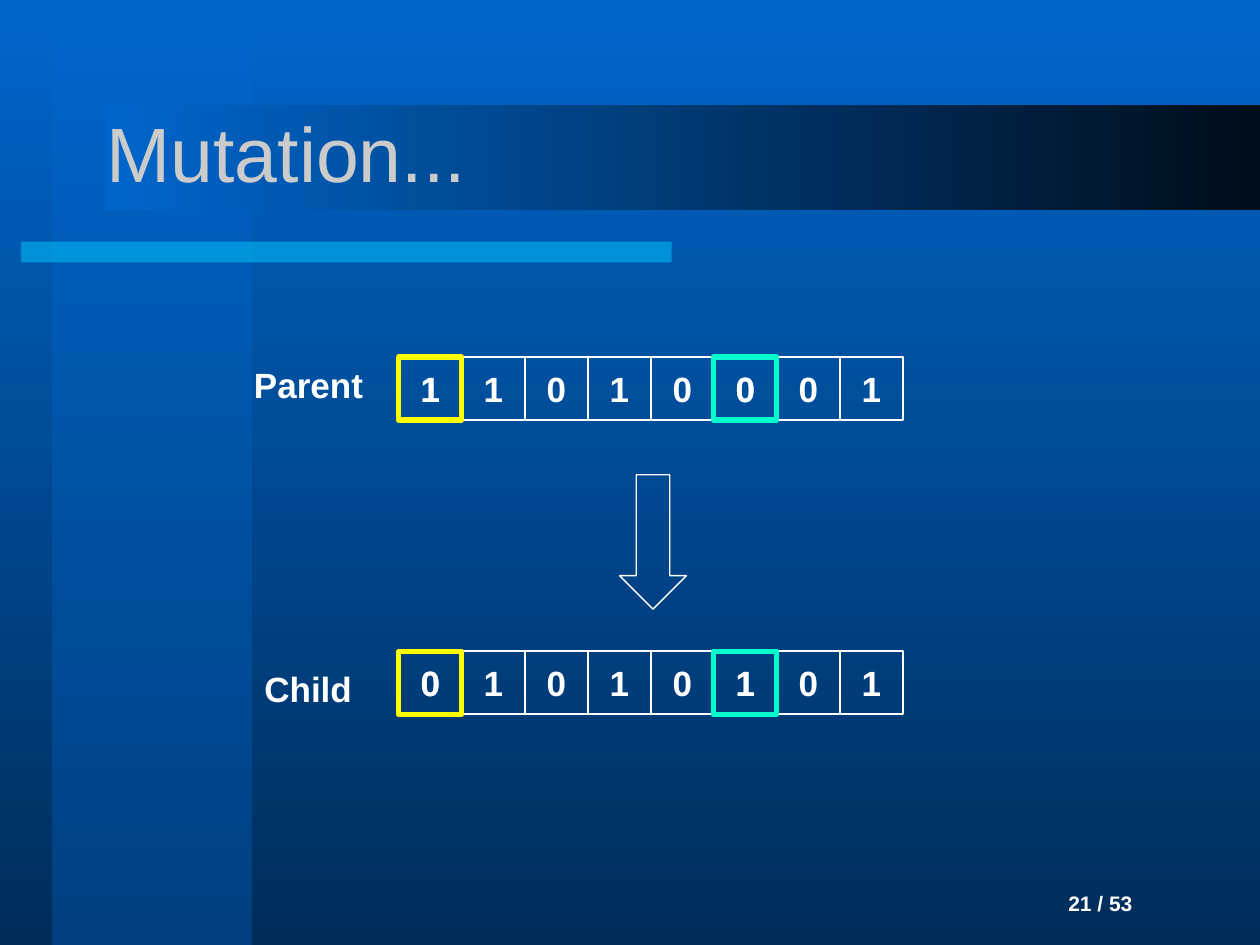
from lxml import etree
from pptx import Presentation
from pptx.dml.color import RGBColor
from pptx.enum.shapes import MSO_SHAPE
from pptx.enum.text import MSO_ANCHOR, PP_ALIGN
from pptx.oxml.ns import qn
from pptx.util import Cm, Pt

RECTANGLE = MSO_SHAPE.RECTANGLE
DOWN_ARROW = MSO_SHAPE.DOWN_ARROW
MIDDLE, TOP = MSO_ANCHOR.MIDDLE, MSO_ANCHOR.TOP
LEFT, CENTER = PP_ALIGN.LEFT, PP_ALIGN.CENTER

COLORS = {
    "blue": "0066CC", "panel": "0053A6", "navy": "002D5A", "night": "000D1A",
    "cyan": "00CCFF", "title": "CBCBCB", "white": "FFFFFF",
    "yellow": "FFFF00", "green": "00FFCC",
}
DOWNWARD, RIGHTWARD = 270, 0
CELL = 1.27
HIGHLIGHTS = {0: "yellow", 5: "green"}


def rgb(name):
    """Return the named colour."""
    return RGBColor.from_string(COLORS[name])


def set_gradient(fill, names, angle):
    """Fill with a linear gradient between two named colours."""
    fill.gradient()
    fill.gradient_angle = angle
    for stop, name in zip(fill.gradient_stops, names):
        stop.color.rgb = rgb(name)


def set_opacity(shape, percent):
    """Make every fill colour of a shape partly transparent."""
    for color in shape._element.spPr.iter(qn("a:srgbClr")):
        etree.SubElement(color, qn("a:alpha"), val=str(percent * 1000))


def add_shape(slide, kind, box):
    """Add a preset shape without shadow, fill or line."""
    shape = slide.shapes.add_shape(kind, *map(Cm, box))
    shape.shadow.inherit = False
    shape.fill.background()
    shape.line.fill.background()
    return shape


def set_line(shape, name, width):
    """Outline a shape."""
    shape.line.color.rgb = rgb(name)
    shape.line.width = Pt(width)


def set_text(shape, text, size=20, color="white", bold=True,
             align=LEFT, anchor=TOP, wrap=False):
    """Write one formatted paragraph into a shape."""
    frame = shape.text_frame
    for key, value in {"word_wrap": wrap, "vertical_anchor": anchor}.items():
        setattr(frame, key, value)
    paragraph = frame.paragraphs[0]
    paragraph.alignment = align
    run = paragraph.add_run()
    run.text = text
    for key, value in {"name": "Arial", "size": Pt(size), "bold": bold}.items():
        setattr(run.font, key, value)
    run.font.color.rgb = rgb(color)


def add_text(slide, box, text, **formats):
    """Add a text box."""
    set_text(slide.shapes.add_textbox(*map(Cm, box)), text, **formats)


def add_backdrop(slide, width, height):
    """Draw the background, side panel, accent bar and title band."""
    set_gradient(slide.background.fill, ("blue", "navy"), DOWNWARD)
    panel = add_shape(slide, RECTANGLE, (1.06, 0, 4.02, height))
    set_gradient(panel.fill, ("blue", "panel"), DOWNWARD)
    bar = add_shape(slide, RECTANGLE, (0.42, 4.87, 13.12, 0.42))
    bar.fill.solid()
    bar.fill.fore_color.rgb = rgb("cyan")
    for shape in (panel, bar):
        set_opacity(shape, 50)
    band = add_shape(slide, RECTANGLE, (2.12, 2.12, width - 2.12, 2.12))
    set_gradient(band.fill, ("blue", "night"), RIGHTWARD)


def add_cell(slide, left, top, digit, color="white", width=1):
    """Draw one gene of a chromosome."""
    cell = add_shape(slide, RECTANGLE, (left, top, CELL, CELL))
    set_line(cell, color, width)
    set_text(cell, digit, align=CENTER, anchor=MIDDLE)


def add_chromosome(slide, left, top, digits):
    """Draw a row of genes and mark the mutated ones."""
    for index, digit in enumerate(digits):
        add_cell(slide, left + index * CELL, top, digit)
    for index, color in HIGHLIGHTS.items():
        add_cell(slide, left + index * CELL, top, digits[index], color, 3)


def add_mutation(slide, left, top):
    """Draw the parent, the arrow and the child."""
    add_chromosome(slide, left, top, "11010001")
    add_chromosome(slide, left, top + 5.93, "01010101")
    arrow = add_shape(slide, DOWN_ARROW, (left + 4.45, top + 2.37, 1.35, 2.71))
    set_line(arrow, "white", 0.75)
    add_text(slide, (left - 3.17, top, 2.72, 1.09), "Parent")
    add_text(slide, (left - 2.96, top + 6.14, 2.29, 1.09), "Child")


def main():
    """Build and save the slide."""
    width, height = 25.4, 19.05
    presentation = Presentation()
    presentation.slide_width, presentation.slide_height = Cm(width), Cm(height)
    slide = presentation.slides.add_slide(presentation.slide_layouts[6])
    add_backdrop(slide, width, height)
    add_text(slide, (21.17, 17.57, 4.2, 1.27), " 21 / 53",
             size=12, anchor=MIDDLE, wrap=True)
    add_text(slide, (1.9, 1.48, 21.59, 3.17), "Mutation...",
             size=44, color="title", bold=False, anchor=MIDDLE, wrap=True)
    add_mutation(slide, 8.04, 7.2)
    presentation.save("out.pptx")


if __name__ == "__main__":
    main()
